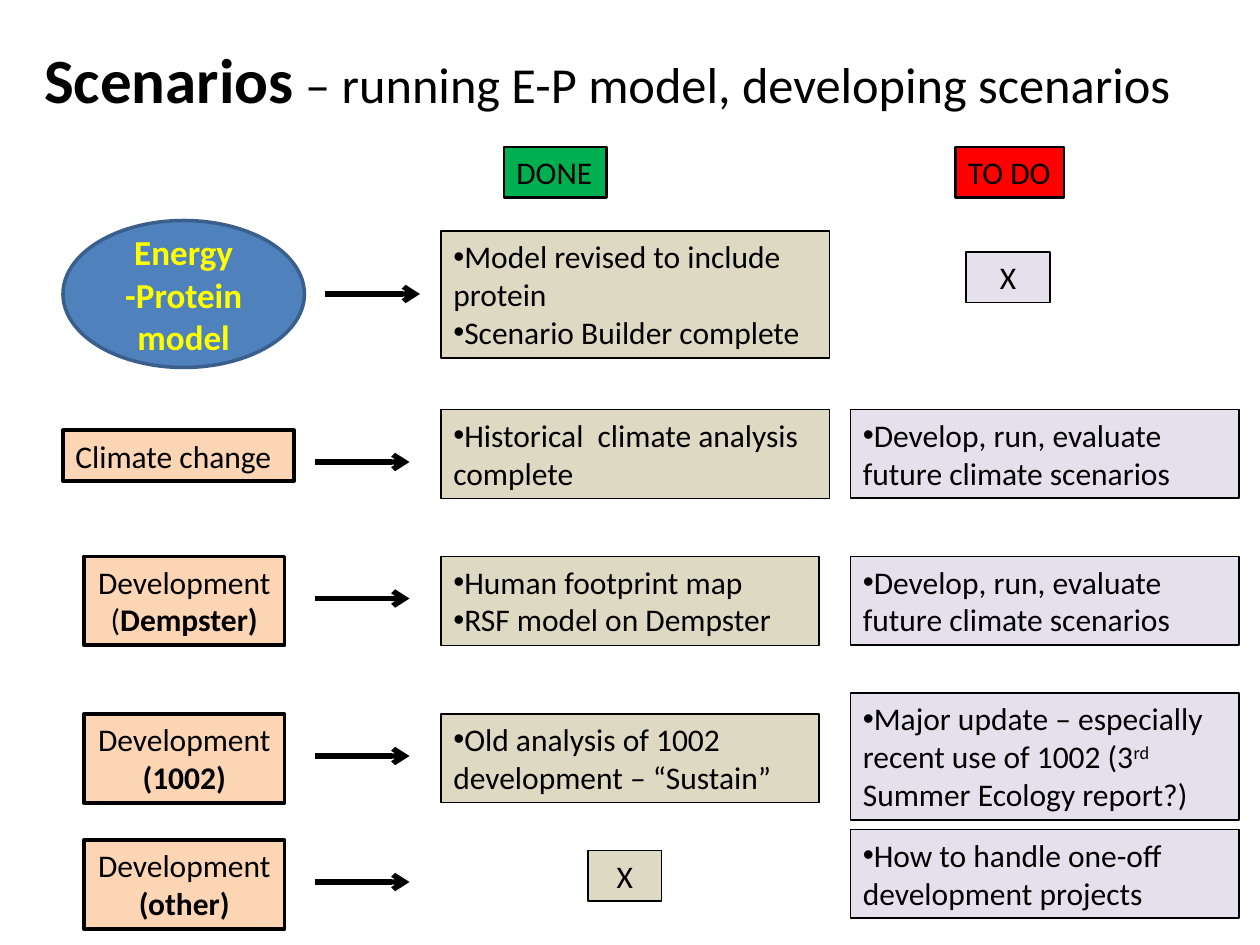
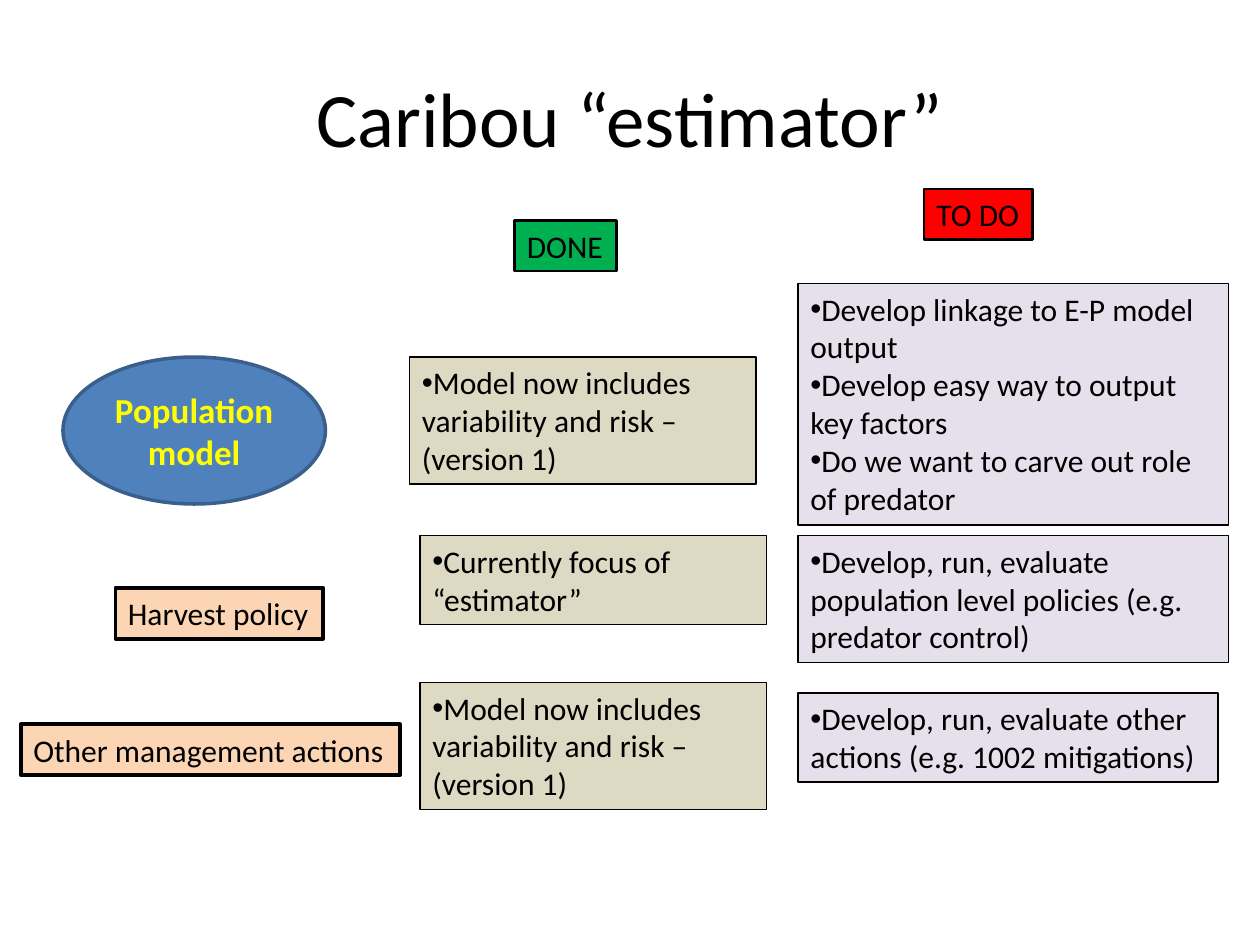
"""Build two status slides that set models and actions against work done and to do."""
from typing import NamedTuple

from lxml.etree import SubElement
from pptx import Presentation
from pptx.dml.color import RGBColor
from pptx.enum.shapes import MSO_CONNECTOR as CONN, MSO_SHAPE as SHAPE
from pptx.enum.text import MSO_ANCHOR as ANCHOR, MSO_AUTO_SIZE as FIT, PP_ALIGN as ALIGN
from pptx.oxml.ns import qn
from pptx.util import Inches, Pt

WIDTH, HEIGHT = Inches(10), Inches(7.5)
COLS, ROWS = 120, 90
LINE_ROWS, PAD_ROWS = 3.63, 1.2
FONT = "Calibri"
BLACK = "000000"


class Run(NamedTuple):
    text: str
    bold: bool | None = None
    size: float | None = None
    sup: bool = False


class Style(NamedTuple):
    fill: str
    width: float
    line: str = BLACK
    color: str = BLACK
    size: float = 18
    bold: bool = False
    bullet: bool = False
    wrap: bool = True


class Box(NamedTuple):
    style: Style
    col: float
    row: float
    cols: float
    lines: int
    paras: list
    align: ALIGN = ALIGN.LEFT


class Oval(NamedTuple):
    col: float
    row: float
    cols: float
    text: str


class Arrow(NamedTuple):
    col: float
    row: float


class Page(NamedTuple):
    title: list
    title_box: tuple
    title_align: ALIGN
    items: list


MODEL = Style("4F81BD", 2, line="3A5F8C", color="FFFF00", size=20, bold=True)
TOPIC = Style("FCD5B5", 2.25, wrap=False)
WIDE_TOPIC = TOPIC._replace(wrap=True)
DONE_HEAD = Style("00B050", 1.5, wrap=False)
TODO_HEAD = Style("FF0000", 1.5, wrap=False)
DONE = Style("DDD9C3", 0.75, bullet=True)
TODO = Style("E6E0EC", 1, bullet=True)
DONE_NONE = DONE._replace(bullet=False)
TODO_NONE = TODO._replace(bullet=False, width=0.75)


def x(cols: float) -> int:
    """Turn grid columns into a length."""
    return round(WIDTH * cols / COLS)


def y(rows: float) -> int:
    """Turn grid rows into a length."""
    return round(HEIGHT * rows / ROWS)


def paint(target, color: str) -> None:
    """Give a fill or a line one solid colour."""
    fill = getattr(target, "fill", target)
    fill.solid()
    fill.fore_color.rgb = RGBColor.from_string(color)


def write(tf, paras: list, *, size: float = 18, color: str = BLACK, bold: bool = False,
          align: ALIGN = ALIGN.LEFT, bullet: bool = False) -> None:
    """Fill a text frame with paragraphs of plain strings or runs."""
    for i, para in enumerate(paras):
        p = tf.paragraphs[0] if i == 0 else tf.add_paragraph()
        p.alignment = align
        if bullet:
            pPr = p._p.get_or_add_pPr()
            SubElement(pPr, qn("a:buFont"), typeface="Arial")
            SubElement(pPr, qn("a:buChar"), char="•")
        for run in [Run(para)] if isinstance(para, str) else para:
            r = p.add_run()
            r.text = run.text
            r.font.name = FONT
            r.font.size = Pt(run.size or size)
            r.font.bold = bold if run.bold is None else run.bold
            r.font.color.rgb = RGBColor.from_string(color)
            if run.sup:
                r._r.get_or_add_rPr().set("baseline", "30000")


def dress(s, style: Style, paras: list, align: ALIGN) -> None:
    """Apply a style to a shape and write its text."""
    paint(s.fill, style.fill)
    paint(s.line, style.line)
    s.line.width = Pt(style.width)
    s.text_frame.word_wrap = style.wrap
    write(s.text_frame, paras, size=style.size, color=style.color, bold=style.bold,
          align=align, bullet=style.bullet)


def add_box(slide, box: Box) -> None:
    """Draw a text box as high as its lines need."""
    s = slide.shapes.add_textbox(x(box.col), y(box.row), x(box.cols),
                                 y(PAD_ROWS + LINE_ROWS * box.lines))
    dress(s, box.style, box.paras, box.align)
    s.text_frame.auto_size = FIT.SHAPE_TO_FIT_TEXT


def add_oval(slide, oval: Oval) -> None:
    """Draw the ellipse that names a model."""
    s = slide.shapes.add_shape(SHAPE.OVAL, x(oval.col), y(oval.row), x(oval.cols), y(14))
    s.shadow.inherit = False
    s.text_frame.vertical_anchor = ANCHOR.MIDDLE
    dress(s, MODEL, [oval.text], ALIGN.CENTER)


def add_arrow(slide, arrow: Arrow) -> None:
    """Draw an arrow nine columns long to the right."""
    s = slide.shapes.add_connector(CONN.STRAIGHT, x(arrow.col), y(arrow.row),
                                   x(arrow.col + 9), y(arrow.row))
    paint(s.line, BLACK)
    s.line.width = Pt(3)
    SubElement(s.line._get_or_add_ln(), qn("a:tailEnd"), type="arrow")
    SubElement(s._element.spPr, qn("a:effectLst"))


def add_page(prs, page: Page) -> None:
    """Add a slide with its title and its items."""
    slide = prs.slides.add_slide(prs.slide_layouts[5])
    title = slide.shapes.title
    col, row, cols, rows = page.title_box
    title.left, title.top, title.width, title.height = x(col), y(row), x(cols), y(rows)
    title.text_frame.auto_size = FIT.NONE
    title.text_frame.vertical_anchor = ANCHOR.MIDDLE
    write(title.text_frame, [page.title], size=44, align=page.title_align)
    draw = {Box: add_box, Oval: add_oval, Arrow: add_arrow}
    for item in page.items:
        draw[type(item)](slide, item)


def heads(done: tuple, todo: tuple) -> list:
    """Return the two column heads at the given cells."""
    return [Box(DONE_HEAD, *done, 9.75, 1, ["DONE"]),
            Box(TODO_HEAD, *todo, 10.35, 1, ["TO DO"])]


def development(row: float, kind: list) -> Box:
    """Return a two-line development topic."""
    return Box(TOPIC, 8, row, 19.1, 2, ["Development", kind], ALIGN.CENTER)


FUTURE = ["Develop, run, evaluate future climate scenarios"]
VARIABILITY = ["Model now includes variability and risk – (version 1)"]

SCENARIOS = Page(
    [Run("Scenarios", True, 36), Run(" – running E-P model, developing scenarios", size=28.8)],
    (3, 0, 114, 15), ALIGN.LEFT,
    [
        *heads((48, 14), (91, 14)),
        Oval(6, 21, 23, "Energy -Protein model"),
        Box(WIDE_TOPIC, 6, 41, 22, 1, ["Climate change"]),
        development(53, [Run("("), Run("Dempster)", True)]),
        development(68, [Run("(1002)", True)]),
        development(80, [Run("(other)", True)]),
        Arrow(31, 28),
        *[Arrow(30, row) for row in (44, 57, 72, 84)],
        Box(DONE, 42, 22, 37, 3,
            ["Model revised to include protein", "Scenario Builder complete"]),
        Box(DONE, 42, 39, 37, 2, ["Historical  climate analysis complete"]),
        Box(DONE, 42, 53, 36, 2, ["Human footprint map", "RSF model on Dempster"]),
        Box(DONE, 42, 68, 36, 2, ["Old analysis of 1002 development – “Sustain”"]),
        Box(DONE_NONE, 56, 81, 7, 1, ["X"], ALIGN.CENTER),
        Box(TODO_NONE, 92, 24, 8, 1, ["X"], ALIGN.CENTER),
        *[Box(TODO, 81, row, 37, 2, FUTURE) for row in (39, 53)],
        Box(TODO, 81, 66, 37, 3,
            [[Run("Major update – especially recent use of 1002 (3"), Run("rd", sup=True),
              Run(" Summer Ecology report?)")]]),
        Box(TODO, 81, 79, 37, 2, ["How to handle one-off development projects"]),
    ])

ESTIMATOR = Page(
    [Run("Caribou “estimator”")], (6, 3.6, 108, 15), ALIGN.CENTER,
    [
        *heads((49, 21), (88, 18)),
        Oval(6, 34, 25, "Population model"),
        Box(TOPIC, 11, 56, 19.8, 1, ["Harvest policy"]),
        Box(TOPIC, 2, 69, 36.1, 1, ["Other management actions"]),
        Box(DONE, 39, 34, 33, 3, VARIABILITY),
        Box(DONE, 40, 51, 33, 2, ["Currently focus of “estimator”"]),
        Box(DONE, 40, 65, 33, 3, VARIABILITY),
        Box(TODO, 76, 27, 41, 6,
            ["Develop linkage to E-P model output", "Develop easy way to output key factors",
             "Do we want to carve out role of predator"]),
        Box(TODO, 76, 51, 41, 3,
            ["Develop, run, evaluate population level policies (e.g. predator control)"]),
        Box(TODO, 76, 66, 40, 2,
            ["Develop, run, evaluate other actions (e.g. 1002 mitigations)"]),
    ])


def main() -> None:
    """Build and save the presentation."""
    prs = Presentation()
    prs.slide_width, prs.slide_height = WIDTH, HEIGHT
    for page in (SCENARIOS, ESTIMATOR):
        add_page(prs, page)
    prs.save("out.pptx")


if __name__ == "__main__":
    main()
